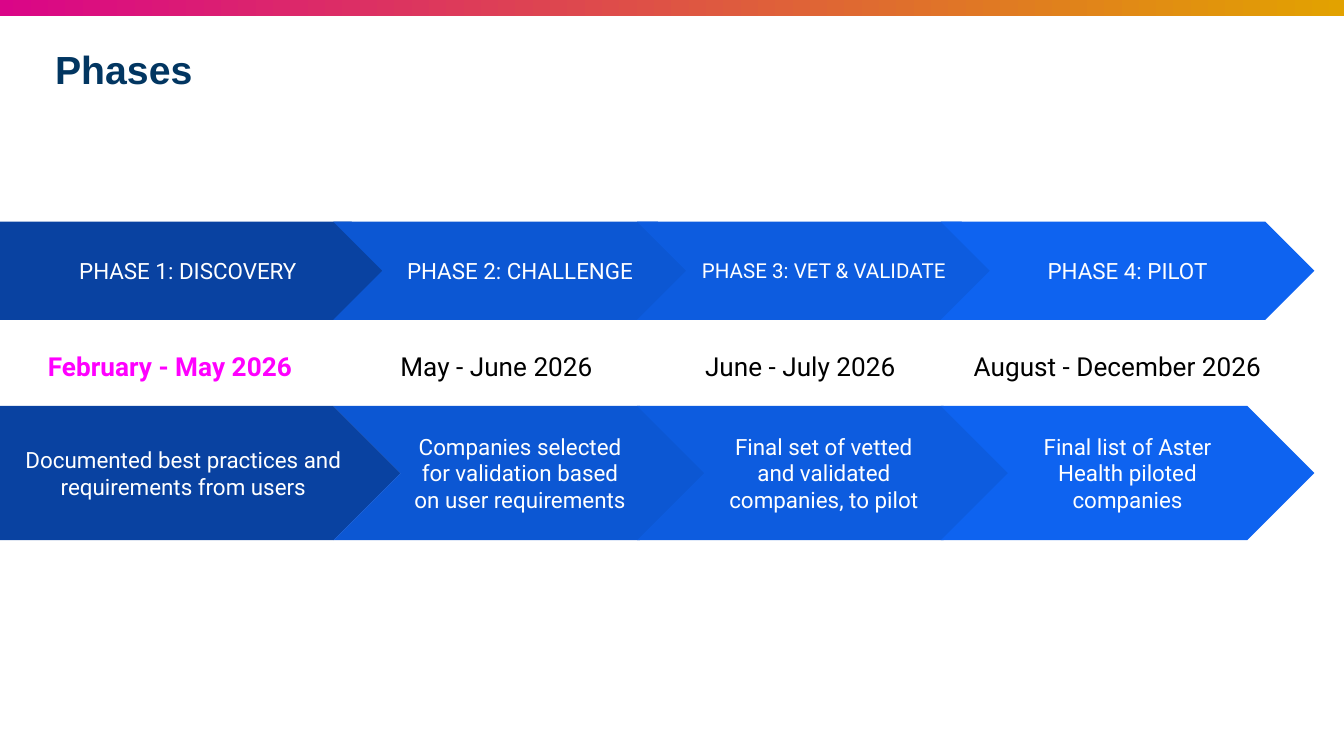
from dataclasses import dataclass

from pptx import Presentation, util as u
from pptx.dml.color import RGBColor
from pptx.enum import shapes, text

PX = 4572  # EMU per px, 200 px to the inch


@dataclass(frozen=True)
class Theme:
    heading_font: str = "Arial"
    body_font: str = "Roboto"
    heading: str = "023661"
    white: str = "FFFFFF"
    black: str = "000000"
    current: str = "FF00FF"
    phases: tuple = ("0942A1", "0C57D3", "0D5CDF", "0E63F0")
    band: tuple = ("DA0588", "E2A200")
    title_size: int = 21
    date_size: int = 14
    label_size: int = 12
    small_size: int = 11


class Deck:
    def __init__(self, theme, width, height):
        self.theme = theme
        self.prs = Presentation()
        self.prs.slide_width, self.prs.slide_height = width * PX, height * PX
        self.s = self.prs.slides.add_slide(self.prs.slide_layouts[6])

    def set_text(self, sp, words, size, color, font=None, bold=False,
                 align=text.PP_ALIGN.CENTER, anchor=text.MSO_ANCHOR.MIDDLE,
                 inset=(20, 20), spacing=None):
        tf = sp.text_frame
        tf.word_wrap = True
        tf.vertical_anchor = anchor
        tf.margin_left = tf.margin_right = inset[0] * PX
        tf.margin_top = tf.margin_bottom = inset[1] * PX
        p = tf.paragraphs[0]
        p.alignment = align
        if spacing:
            p.line_spacing = spacing
        r = p.add_run()
        r.text = words
        r.font.name = font or self.theme.body_font
        r.font.size = u.Pt(size)
        r.font.bold = bold
        r.font.color.rgb = RGBColor.from_string(color)

    def shape(self, kind, *box):
        sp = self.s.shapes.add_shape(kind, *(v * PX for v in box))
        sp.shadow.inherit = False
        sp.line.fill.background()
        return sp

    def band(self, *box):
        fill = self.shape(shapes.MSO_SHAPE.RECTANGLE, *box).fill
        fill.gradient()
        fill.gradient_angle = 0
        for stop, position, color in zip(fill.gradient_stops, (0, 1), self.theme.band):
            stop.position = position
            stop.color.rgb = RGBColor.from_string(color)

    def arrow(self, kind, box, color, words, size):
        sp = self.shape(kind, *box)
        sp.adjustments[0] = 0.5
        sp.fill.solid()
        sp.fill.fore_color.rgb = RGBColor.from_string(color)
        self.set_text(sp, words, size, self.theme.white)

    def label(self, box, words, size, color, **style):
        sp = self.s.shapes.add_textbox(*(v * PX for v in box))
        self.set_text(sp, words, size, color, **style)


def main():
    t = Theme()
    deck = Deck(t, 2000, 1125)

    # Top band and title
    deck.band(-6, -2, 2010, 26)
    deck.label((68, 60, 1864, 126), "Phases", t.title_size, t.heading,
               font=t.heading_font, bold=True, align=text.PP_ALIGN.LEFT,
               anchor=text.MSO_ANCHOR.TOP, inset=(14, 8))

    # Phase name, name size, dates, width of dates, outcome
    phases = [
        ("PHASE 1: DISCOVERY", t.label_size, "February - May 2026", 506,
         "Documented best practices and requirements from users"),
        ("PHASE 2: CHALLENGE", t.label_size, "May - June 2026", 486,
         "Companies selected for validation based on user requirements"),
        ("PHASE 3: VET & VALIDATE", t.small_size, "June - July 2026", 486,
         "Final set of vetted and validated companies, to pilot"),
        ("PHASE 4: PILOT", t.label_size, "August - December 2026", 526,
         "Final list of Aster Health piloted companies"),
    ]

    # One column per phase: name arrow, dates, outcome arrow
    for i, (name, size, dates, dates_width, outcome) in enumerate(phases):
        first = i == 0
        kind = shapes.MSO_SHAPE.PENTAGON if first else shapes.MSO_SHAPE.CHEVRON
        left, width = (0, 596) if first else (496 + 452 * (i - 1), 556)
        deck.arrow(kind, (left, 330, width, 146), t.phases[i], name, size)
        deck.label((left, 478, dates_width, 126), dates, t.date_size,
                   t.current if first else t.black, bold=first, spacing=1.15)
        deck.arrow(kind, (left, 604, width, 200), t.phases[i], outcome, t.label_size)

    deck.prs.save("out.pptx")


if __name__ == "__main__":
    main()
